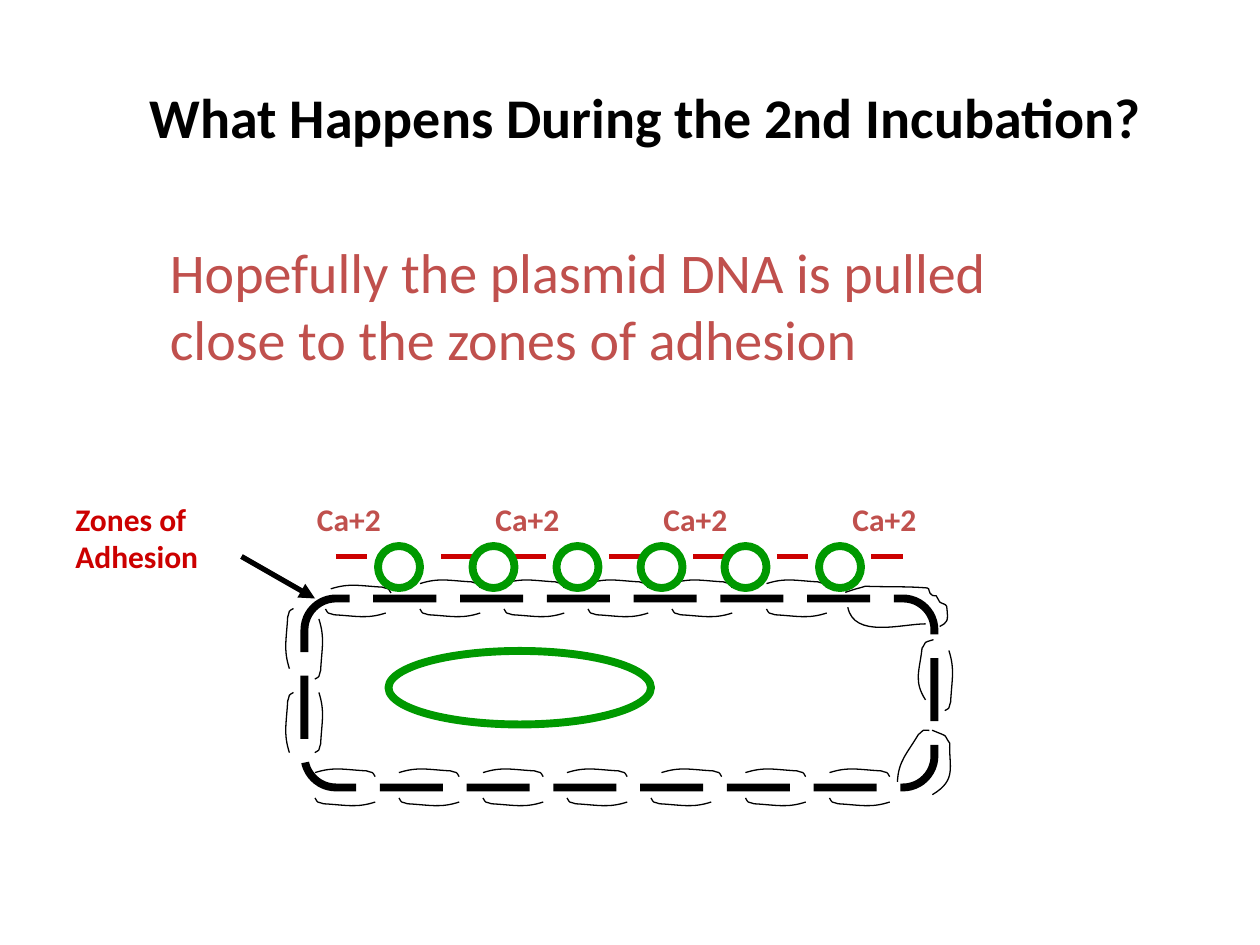
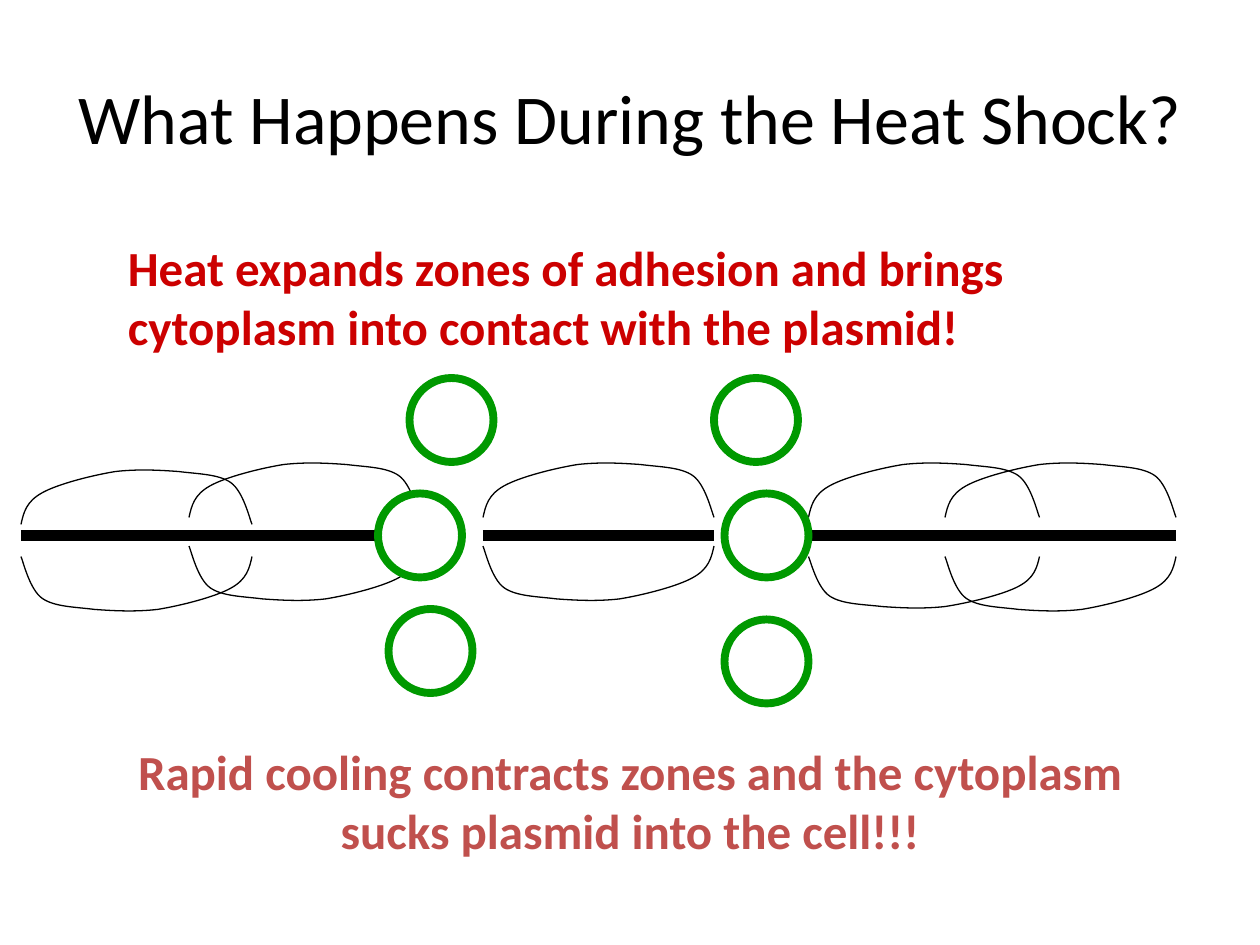
import lxml.etree
import pptx
import pptx.dml.color
import pptx.enum.dml
import pptx.enum.shapes
import pptx.enum.text
import pptx.oxml.ns
import pptx.util

Pt = pptx.util.Pt
RGBColor = pptx.dml.color.RGBColor
SHAPES = pptx.enum.shapes.MSO_SHAPE
ALIGN = pptx.enum.text.PP_ALIGN
ANCHOR = pptx.enum.text.MSO_ANCHOR

BLACK = RGBColor(0x00, 0x00, 0x00)
WHITE = RGBColor(0xFF, 0xFF, 0xFF)
RED = RGBColor(0xCC, 0x00, 0x00)
BRICK = RGBColor(0xC0, 0x50, 0x4D)
GREEN = RGBColor(0x00, 0x99, 0x00)

# Curves: a start point, then three points for each Bezier segment.
MEMBRANE = [(0, 3.5), (10.8, 0), (16.6, 1.8), (29.5, 2.5),
            (33.8, 4), (32.4, 2.5), (34.4, 5.8)]
MIRRORED_MEMBRANE = [(34.4 - x, y) for x, y in MEMBRANE]
CORNER_OUTSIDE = [(483, 338.5), (492, 335.5), (488, 337), (494.5, 335),
                  (507, 335.5), (518.5, 335), (530, 336),
                  (531.5, 336.5), (530.5, 338.5), (531.5, 339),
                  (532, 340.5), (533.5, 340.5), (535, 340.5),
                  (535.5, 342), (536.5, 342.5), (537, 344),
                  (538, 345), (540.5, 345), (541, 346.5),
                  (542, 355.5), (541.5, 355.5), (537, 358)]
CORNER_INSIDE = [(484.5, 347), (488, 365), (515.5, 356.5), (529, 356.5)]
ZONE = [(0, 31.7), (1.5, 25), (3, 18.7), (12, 13.7),
        (21, 8.6), (41, 3.6), (54, 1.5),
        (67, 0), (79, 0.7), (90, 1.5),
        (101, 2.9), (113, 2.9), (120, 7.9),
        (127, 13), (130.5, 28), (132, 31.7)]


class Deck:
    """Holds the shared style and the slide being drawn; lengths are in points."""

    font = "Calibri"
    thin, thick = 0.75, 4.5

    def __init__(self):
        self.presentation = pptx.Presentation()
        self.presentation.slide_width = Pt(720)
        self.presentation.slide_height = Pt(540)
        self.slide = None

    def add_slide(self):
        self.slide = self.presentation.slides.add_slide(
            self.presentation.slide_layouts[6])

    def text(self, words, left, top, width, height, size, color,
             bold=True, align=ALIGN.LEFT, anchor=ANCHOR.TOP):
        box = self.slide.shapes.add_textbox(
            Pt(left), Pt(top), Pt(width), Pt(height))
        frame = box.text_frame
        frame.word_wrap = True
        frame.vertical_anchor = anchor
        frame.text = words
        paragraph = frame.paragraphs[0]
        paragraph.alignment = align
        font = paragraph.runs[0].font
        font.name = self.font
        font.size = Pt(size)
        font.bold = bold
        font.color.rgb = color

    def title(self, words, width, size, bold):
        self.text(words, 36, 21.6, width, 90, size, BLACK, bold,
                  ALIGN.CENTER, ANCHOR.MIDDLE)

    def outlined(self, kind, left, top, width, height, color):
        shape = self.slide.shapes.add_shape(
            kind, Pt(left), Pt(top), Pt(width), Pt(height))
        shape.shadow.inherit = False
        shape.fill.solid()
        shape.fill.fore_color.rgb = WHITE
        shape.line.color.rgb = color
        shape.line.width = Pt(self.thick)
        return shape

    def plasmid(self, left, top, width, height):
        self.outlined(SHAPES.OVAL, left, top, width, height, GREEN)

    def line(self, start, end, color, width, arrow=False):
        connector = self.slide.shapes.add_connector(
            pptx.enum.shapes.MSO_CONNECTOR.STRAIGHT,
            Pt(start[0]), Pt(start[1]), Pt(end[0]), Pt(end[1]))
        connector.line.color.rgb = color
        connector.line.width = Pt(width)
        properties = connector.element.spPr
        if arrow:
            outline = properties.xpath("a:ln")[0]
            lxml.etree.SubElement(
                outline, pptx.oxml.ns.qn("a:tailEnd"), type="triangle")
        lxml.etree.SubElement(properties, pptx.oxml.ns.qn("a:effectLst"))

    def curve(self, points, left=0, top=0, rotation=0, size=None):
        """Draw Bezier segments through points, optionally stretched to size."""
        points = [(Pt(x), Pt(y)) for x, y in points]
        builder = self.slide.shapes.build_freeform(*points[0])
        builder.add_line_segments(points[1:], close=False)
        shape = builder.convert_to_shape(Pt(left), Pt(top))
        straight = shape.element.xpath(".//a:lnTo")
        for first, second, third in zip(*[iter(straight)] * 3):
            first.tag = pptx.oxml.ns.qn("a:cubicBezTo")
            for segment in (second, third):
                first.append(segment[0])
                segment.getparent().remove(segment)
        if size:
            shape.width, shape.height = Pt(size[0]), Pt(size[1])
        shape.rotation = rotation
        shape.shadow.inherit = False
        shape.fill.background()
        shape.line.color.rgb = BLACK
        shape.line.width = Pt(self.thin)


def draw_cell(deck):
    cell = deck.outlined(SHAPES.FLOWCHART_ALTERNATE_PROCESS,
                         174, 342, 360, 108, BLACK)
    cell.line.dash_style = pptx.enum.dml.MSO_LINE.LONG_DASH

    deck.curve(MEMBRANE, 189, 333)
    top_lefts = [240, 288, 336, 384, 438]
    shared_bottom_lefts = [180, 228, 276, 324, 426, 474]
    membrane_rows = [
        (top_lefts, 330, 0),
        ([186] + top_lefts, 348, 180),
        (shared_bottom_lefts + [378], 438, 0),
        (shared_bottom_lefts + [372], 456, 180),
    ]
    for lefts, top, rotation in membrane_rows:
        for left in lefts:
            deck.curve(MEMBRANE, left, top, rotation)

    for left, top, rotation in [(147.6, 362, 270), (147.6, 410, 270),
                                (165.6, 368, 90), (165.6, 410, 90),
                                (525.6, 386, 90)]:
        deck.curve(MEMBRANE, left, top, rotation)
    deck.curve(MEMBRANE, 510.5, 377, 270, (34.4, 11.5))
    deck.curve(MEMBRANE, 502.6, 427, 296.6, (34.4, 8))
    deck.curve(MIRRORED_MEMBRANE, 520.6, 427, 102.2, (36, 20))
    deck.curve(CORNER_OUTSIDE)
    deck.curve(CORNER_INSIDE)
    deck.plasmid(222, 372, 150, 42)


def incubation_slide(deck):
    deck.add_slide()
    deck.title("What Happens During the 2nd Incubation?", 666, 32, True)
    draw_cell(deck)
    for left in (192, 252, 294, 348, 396, 444, 498):
        deck.line((left, 318), (left + 18, 318), RED, 3)
    for left in (174, 276, 372, 480):
        deck.text("Ca+2", left, 282, 60, 29, 18, BRICK)
    for left in (216, 270, 318, 366, 414, 468):
        deck.plasmid(left, 312, 24, 24)
    deck.text("Zones of Adhesion", 36, 282, 108, 50, 18, RED)
    deck.line((138, 318), (180, 342), BLACK, 3, arrow=True)
    deck.text("Hopefully the plasmid DNA is pulled close to the zones of "
              "adhesion", 90, 132, 546, 84, 32, BRICK, bold=False)


def heat_shock_slide(deck):
    deck.add_slide()
    deck.title("What Happens During the Heat Shock?", 648, 40, False)
    # Left of the membrane line, left of its zone, zone top, lower zone top
    zones = [(12, 12, 268, 318), (114, 108, 264, 312), (276, 276, 264, 312),
             (462, 462, 264, 318), (540, 540, 264, 318)]
    for line_left, zone_left, upper_top, lower_top in zones:
        deck.line((line_left, 306), (line_left + 132, 306), BLACK, 6)
        deck.curve(ZONE, zone_left, upper_top)
        lower_size = (132, 30) if zone_left == 462 else None
        deck.curve(ZONE, zone_left, lower_top, 180, lower_size)
    for left, top in [(234, 216), (408, 216), (216, 282),
                      (414, 282), (222, 348), (414, 354)]:
        deck.plasmid(left, top, 48, 48)
    deck.text("Heat expands zones of adhesion and brings cytoplasm into "
              "contact with the plasmid!", 66, 132, 618, 74, 28, RED)
    deck.text("Rapid cooling contracts zones and the cytoplasm sucks plasmid "
              "into the cell!!!", 66, 420, 588, 74, 28, BRICK,
              align=ALIGN.CENTER)


def main():
    deck = Deck()
    incubation_slide(deck)
    heat_shock_slide(deck)
    deck.presentation.save("out.pptx")


if __name__ == "__main__":
    main()
